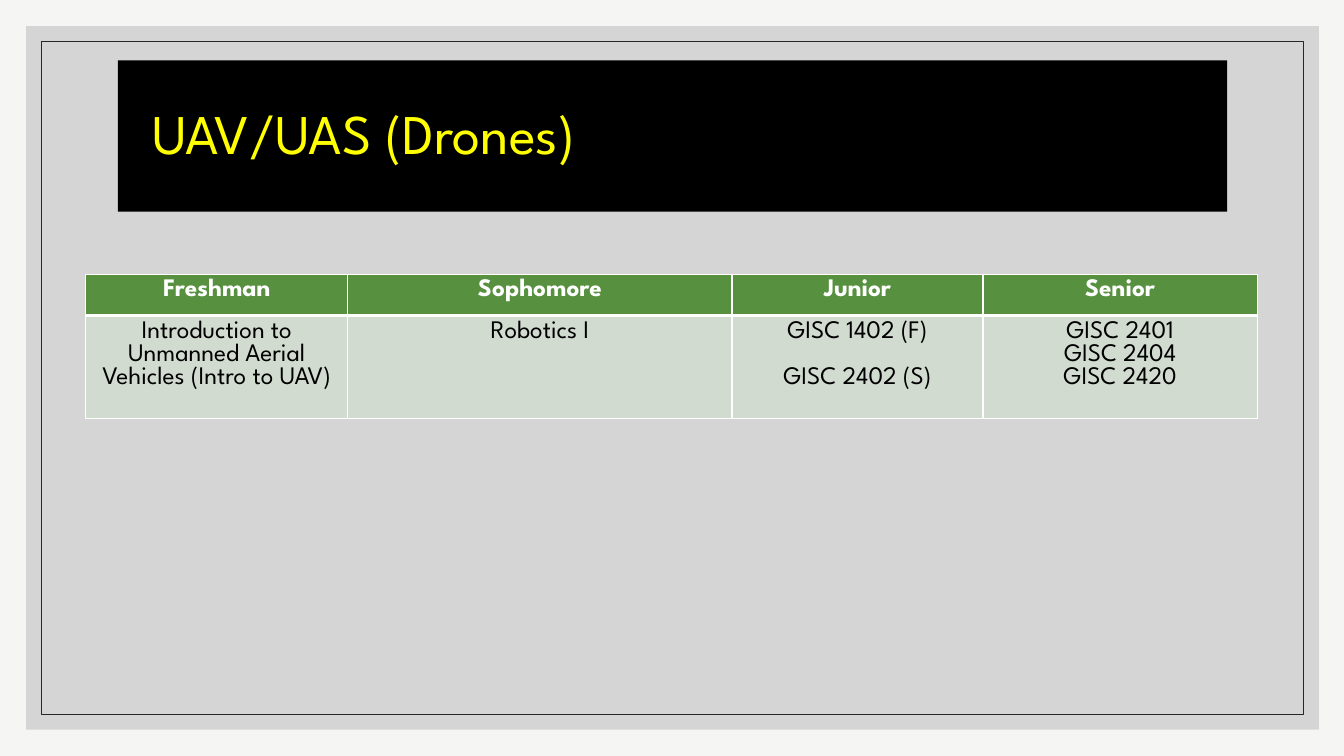
from pptx import Presentation
from pptx.dml.color import RGBColor as RGB
from pptx.enum.shapes import MSO_SHAPE as Shape
from pptx.enum.text import MSO_ANCHOR as Anchor, MSO_AUTO_SIZE as Fit, PP_ALIGN as Align
from pptx.oxml.ns import qn
from pptx.util import Inches, Pt
from lxml.etree import SubElement

TITLE = "UAV/UAS (Drones)"
# Heading, column width, courses
YEARS = [
    ("Freshman", 2.6, ["Introduction to Unmanned Aerial Vehicles (Intro to UAV)"]),
    ("Sophomore", 3.81, ["Robotics I"]),
    ("Junior", 2.49, ["GISC 1402 (F)", "GISC 2402 (S)"]),
    ("Senior", 2.72, ["GISC 2401", "GISC 2404", "GISC 2420"]),
]
GAPS = {"GISC 2402 (S)": 16.5}  # points above a course
ROWS = [0.41, 1.02]
FONT = "League Spartan"
COLORS = {
    "page": "F5F6F4", "panel": "BFBFBF", "frame": "262626",
    "banner": "000000", "title": "FFFF00", "head": "57903F",
    "body": "D1DBCF", "light": "FFFFFF", "dark": "000000",
}
HEAD = {"size": Pt(18), "bold": True, "name": FONT}
BODY = {**HEAD, "bold": False}


def hue(name):
    return RGB.from_string(COLORS[name])


def paint(fill, name):
    fill.solid()
    fill.fore_color.rgb = hue(name)


def style(font, form, name):
    for key, val in form.items():
        setattr(font, key, val)
    font.color.rgb = hue(name)


def add_rect(shapes, *box):
    rect = shapes.add_shape(Shape.RECTANGLE, *map(Inches, box))
    rect.shadow.inherit = False
    return rect


def edge(cell, widths):
    """Draw the cell's borders, given in points by side."""
    props = cell._tc.get_or_add_tcPr()
    for i, (side, width) in enumerate(widths.items()):
        line = SubElement(props, qn(f"a:ln{side}"), w=str(Pt(width)))
        solid = SubElement(line, qn("a:solidFill"))
        SubElement(solid, qn("a:srgbClr"), val=COLORS["light"])
        props.insert(i, line)


def fill_cell(cell, lines, form, ink, back, base):
    paint(cell.fill, back)
    edge(cell, {"L": 1, "R": 1, "T": 4 - base if back == "body" else 1, "B": base})
    frame = cell.text_frame
    frame.text = "\n".join(lines)
    for para, line in zip(frame.paragraphs, lines):
        para.alignment = Align.CENTER
        para.space_before = Pt(GAPS.get(line, 0))
        style(para.runs[0].font, form, ink)


def add_panels(shapes):
    panel = add_rect(shapes, 0.26, 0.26, 12.82, 6.98)
    paint(panel.fill, "panel")
    tint = panel.fill._xPr.find(qn("a:solidFill"))[0]
    SubElement(tint, qn("a:alpha"), val="60000")
    panel.line.fill.background()
    frame = add_rect(shapes, 0.41, 0.41, 12.52, 6.68)
    frame.fill.background()
    frame.line.color.rgb = hue("frame")
    frame.line.width = Pt(0.5)


def set_title(title):
    title.left, title.top, title.width, title.height = map(Inches, (1.17, 0.6, 11, 1.5))
    paint(title.fill, "banner")
    text = title.text_frame
    text.text = TITLE
    text.auto_size = Fit.NONE
    text.vertical_anchor = Anchor.MIDDLE
    text.margin_left = Inches(0.34)
    para = text.paragraphs[0]
    para.alignment = Align.LEFT
    para.line_spacing = 0.9
    style(para.runs[0].font, {"size": Pt(40), "name": FONT}, "title")


def add_years(shapes):
    wide = sum(width for _, width, _ in YEARS)
    box = map(Inches, (0.85, 2.72, wide, sum(ROWS)))
    table = shapes.add_table(len(ROWS), len(YEARS), *box).table
    for row, high in zip(table.rows, ROWS):
        row.height = Inches(high)
    for i, (year, width, courses) in enumerate(YEARS):
        table.columns[i].width = Inches(width)
        fill_cell(table.cell(0, i), [year], HEAD, "light", "head", 3)
        fill_cell(table.cell(1, i), courses, BODY, "dark", "body", 1)


def main():
    deck = Presentation()
    deck.slide_width, deck.slide_height = Inches(13.33), Inches(7.5)
    slide = deck.slides.add_slide(deck.slide_layouts[5])
    paint(slide.background.fill, "page")
    title = slide.shapes.title
    add_panels(slide.shapes)
    slide.shapes.element.append(title.element)  # banner above the panels
    set_title(title)
    add_years(slide.shapes)
    deck.save("out.pptx")


if __name__ == "__main__":
    main()
